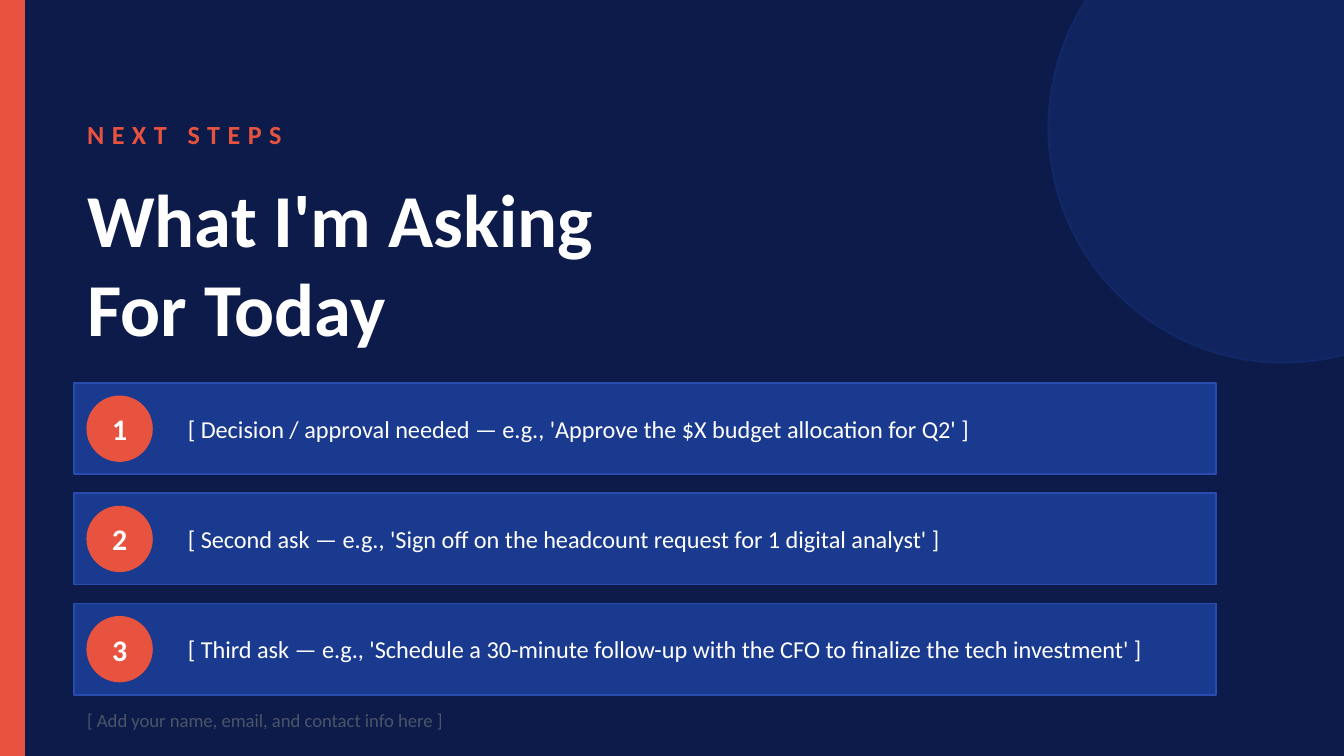
import dataclasses

import pptx
import pptx.dml.color
import pptx.enum.shapes
import pptx.enum.text
import pptx.oxml.ns
import pptx.util
from lxml import etree

Inches = pptx.util.Inches
Shape = pptx.enum.shapes.MSO_SHAPE
Align = pptx.enum.text.PP_ALIGN


@dataclasses.dataclass(frozen=True)
class Theme:
    font: str = "Calibri"
    background: str = "0D1B4B"
    accent: str = "E8533F"
    panel: str = "1A3A8F"
    panel_edge: str = "2A4CAF"
    light: str = "FFFFFF"
    muted: str = "4A5568"
    title_size: int = 40
    badge_size: int = 16
    label_size: int = 14
    body_size: int = 13
    footer_size: int = 10


THEME = Theme()
ASKS = (
    "[ Decision / approval needed — e.g., 'Approve the $X budget allocation for Q2' ]",
    "[ Second ask — e.g., 'Sign off on the headcount request for 1 digital analyst' ]",
    "[ Third ask — e.g., 'Schedule a 30-minute follow-up with the CFO to finalize the tech investment' ]",
)


def rgb(color):
    return pptx.dml.color.RGBColor.from_string(color)


def write(shape, text, size, color, bold=False, align=Align.LEFT, spacing=0):
    frame = shape.text_frame
    frame.text = text
    frame.word_wrap = True
    frame.auto_size = pptx.enum.text.MSO_AUTO_SIZE.NONE
    frame.vertical_anchor = pptx.enum.text.MSO_ANCHOR.MIDDLE
    for para in frame.paragraphs:
        para.alignment = align
        for span in para.runs:
            span.font.name = THEME.font
            span.font.size = pptx.util.Pt(size)
            span.font.bold = bold
            span.font.color.rgb = rgb(color)
            if spacing:
                span.font._element.set("spc", str(spacing * 100))


def add_text(page, box, text, size, color, **style):
    shape = page.shapes.add_textbox(*map(Inches, box))
    write(shape, text, size, color, **style)


def add_block(page, kind, box, fill, edge):
    shape = page.shapes.add_shape(kind, *map(Inches, box))
    shape.shadow.inherit = False
    shape.fill.solid()
    shape.fill.fore_color.rgb = rgb(fill)
    shape.line.color.rgb = rgb(edge)
    shape.line.width = pptx.util.Pt(1)
    return shape


def set_opacity(shape, percent):
    for color in shape._element.spPr.iter(pptx.oxml.ns.qn("a:srgbClr")):
        alpha = etree.SubElement(color, pptx.oxml.ns.qn("a:alpha"))
        alpha.set("val", str(percent * 1000))


def add_backdrop(page, width, height):
    page.background.fill.solid()
    page.background.fill.fore_color.rgb = rgb(THEME.background)
    add_block(page, Shape.RECTANGLE, (0, 0, 0.18, height), THEME.accent, THEME.accent)
    circle = add_block(page, Shape.OVAL, (width - 2.2, -0.8, 3.5, 3.5),
                       THEME.panel, THEME.panel)
    set_opacity(circle, 30)


def add_heading(page, left, top):
    add_text(page, (left, top, 4, 0.6), "NEXT STEPS", THEME.label_size,
             THEME.accent, bold=True, spacing=4)
    title = page.shapes.title
    title.left, title.top = Inches(left), Inches(top + 0.55)
    title.width, title.height = Inches(7), Inches(1.4)
    write(title, "What I'm Asking\nFor Today", THEME.title_size, THEME.light, bold=True)


def add_ask(page, box, number, text):
    left, top, width, height = box
    margin = 0.1
    side = height - 2 * margin
    add_block(page, Shape.RECTANGLE, box, THEME.panel, THEME.panel_edge)
    badge = add_block(page, Shape.OVAL, (left + margin, top + margin, side, side),
                      THEME.accent, THEME.accent)
    frame = badge.text_frame
    frame.margin_left = frame.margin_right = frame.margin_top = frame.margin_bottom = 0
    write(badge, str(number), THEME.badge_size, THEME.light, bold=True, align=Align.CENTER)
    add_text(page, (left + 0.75, top + 0.09, width - 1, 0.5), text,
             THEME.body_size, THEME.light)


def add_asks(page, left, top, width):
    height, gap = 0.68, 0.14
    for index, text in enumerate(ASKS):
        box = (left, top + index * (height + gap), width, height)
        add_ask(page, box, index + 1, text)


def main():
    width, left = 10, 0.55
    height = width * 9 / 16
    deck = pptx.Presentation()
    deck.slide_width, deck.slide_height = Inches(width), Inches(height)
    page = deck.slides.add_slide(deck.slide_layouts.get_by_name("Title Only"))
    add_backdrop(page, width, height)
    add_heading(page, left, 0.7)
    add_asks(page, left, 2.85, 8.5)
    add_text(page, (left, 5.22, 6, 0.28), "[ Add your name, email, and contact info here ]",
             THEME.footer_size, THEME.muted)
    deck.save("out.pptx")


if __name__ == "__main__":
    main()
